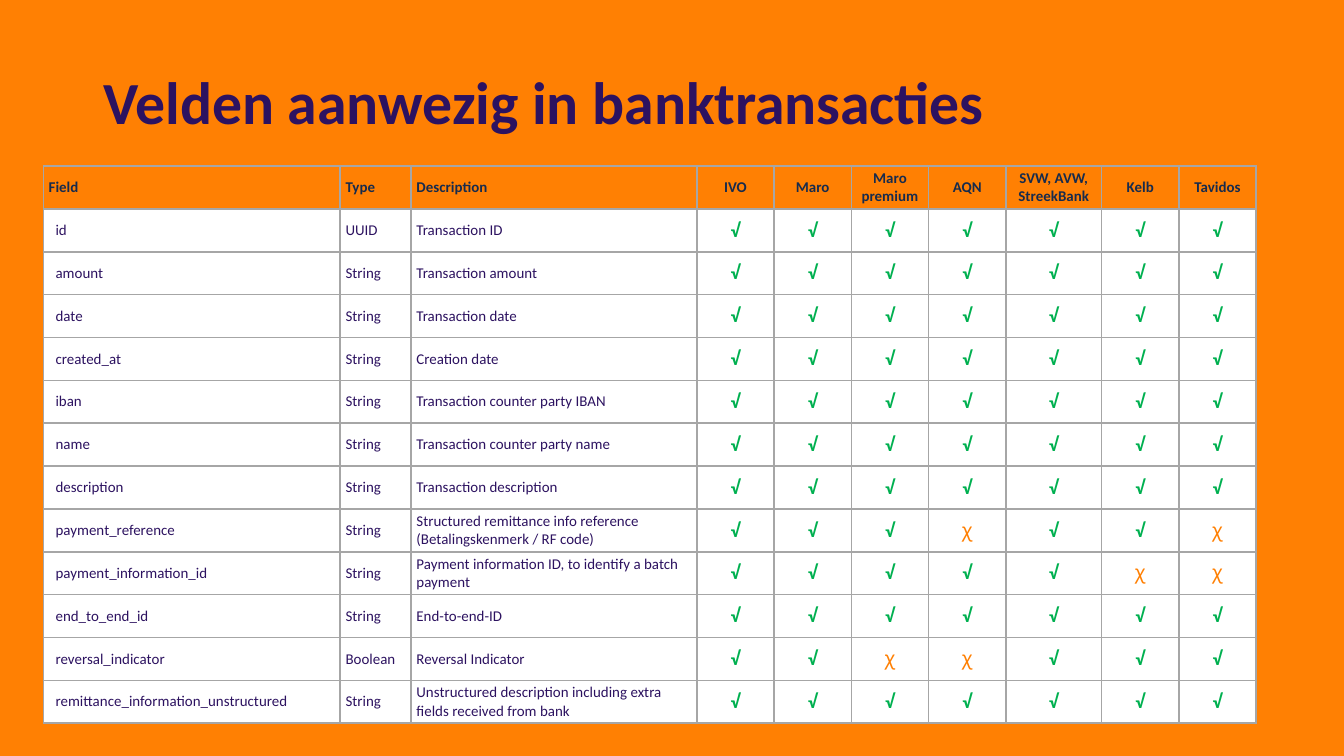
from lxml.etree import SubElement
from pptx import Presentation
from pptx.dml.color import RGBColor
from pptx.enum.text import MSO_ANCHOR, PP_ALIGN
from pptx.oxml.ns import qn
from pptx.util import Cm, Pt

ORANGE = RGBColor(0xFF, 0x80, 0x03)
PURPLE = RGBColor(0x2C, 0x12, 0x60)
NAVY = RGBColor(0x17, 0x2B, 0x4D)
GREEN = RGBColor(0x00, 0xB0, 0x50)
WHITE = RGBColor(0xFF, 0xFF, 0xFF)
GREY = RGBColor(0xA6, 0xA6, 0xA6)

TITLE_FONT = {"name": "Calibri", "size": Pt(32), "bold": True}
HEADER_FONT = {"name": "Calibri", "size": Pt(8), "bold": True}
BODY_FONT = {"name": "Calibri", "size": Pt(8), "bold": False}
PRESENT_FONT = {"name": "Calibri", "size": Pt(10.5), "bold": True}
ABSENT_FONT = {"name": "Calibri", "size": Pt(10.5), "bold": False}
CELL_FORMAT = {
    "margin_left": Cm(0.1), "margin_right": Cm(0.1),
    "margin_top": Cm(0.03), "margin_bottom": Cm(0.03),
    "vertical_anchor": MSO_ANCHOR.MIDDLE,
}
FIELD_INDENT = Cm(0.23)

COLUMN_WIDTHS = [5.61, 1.34, 5.4] + [1.46] * 4 + [1.81] + [1.46] * 2
ROW_HEIGHT = 0.81
LABELS = ["Field", "Type", "Description"]
BANKS = ["IVO", "Maro", "Maro premium", "AQN", "SVW, AVW,\nStreekBank", "Kelb", "Tavidos"]
# Field, type, description, banks that do not supply the field
FIELDS = [
    ("id", "UUID", "Transaction ID", ()),
    ("amount", "String", "Transaction amount", ()),
    ("date", "String", "Transaction date", ()),
    ("created_at", "String", "Creation date", ()),
    ("iban", "String", "Transaction counter party IBAN", ()),
    ("name", "String", "Transaction counter party name", ()),
    ("description", "String", "Transaction description", ()),
    ("payment_reference", "String",
     "Structured remittance info reference (Betalingskenmerk / RF code)", ("AQN", "Tavidos")),
    ("payment_information_id", "String",
     "Payment information ID, to identify a batch payment", ("Kelb", "Tavidos")),
    ("end_to_end_id", "String", "End-to-end-ID", ()),
    ("reversal_indicator", "Boolean", "Reversal Indicator", ("Maro premium", "AQN")),
    ("remittance_information_unstructured", "String",
     "Unstructured description including extra fields received from bank", ()),
]


def write_text(frame, text, font_format, color, align=PP_ALIGN.LEFT):
    frame.text = text
    for paragraph in frame.paragraphs:
        paragraph.alignment = align
        for run in paragraph.runs:
            for key, value in font_format.items():
                setattr(run.font, key, value)
            run.font.color.rgb = color


def add_borders(cell):
    properties = cell._tc.get_or_add_tcPr()
    for side in ("a:lnL", "a:lnR", "a:lnT", "a:lnB"):
        line = SubElement(properties, qn(side), w=str(Pt(1)))
        fill = SubElement(line, qn("a:solidFill"))
        SubElement(fill, qn("a:srgbClr"), val=str(GREY))


def fill_cell(cell, text, font_format, color, align=PP_ALIGN.LEFT, background=WHITE):
    """Format one cell; a background of None leaves it transparent."""
    for key, value in CELL_FORMAT.items():
        setattr(cell, key, value)
    write_text(cell.text_frame, text, font_format, color, align)
    add_borders(cell)
    if background is None:
        cell.fill.background()
    else:
        cell.fill.solid()
        cell.fill.fore_color.rgb = background


def add_title(slide, text):
    title = slide.shapes.title
    title.left, title.top, title.width, title.height = Cm(1.7), Cm(0.61), Cm(19.84), Cm(2.77)
    title.text_frame.vertical_anchor = MSO_ANCHOR.MIDDLE
    write_text(title.text_frame, text, TITLE_FONT, PURPLE)
    title.text_frame.paragraphs[0].line_spacing = 0.9


def add_field_table(slide):
    row_count = len(FIELDS) + 1
    table = slide.shapes.add_table(
        row_count, len(COLUMN_WIDTHS), Cm(0.82), Cm(3.14),
        Cm(sum(COLUMN_WIDTHS)), Cm(ROW_HEIGHT * row_count)).table
    table.horz_banding = False
    for column, width in zip(table.columns, COLUMN_WIDTHS):
        column.width = Cm(width)
    for row in table.rows:
        row.height = Cm(ROW_HEIGHT)

    for index, heading in enumerate(LABELS + BANKS):
        align = PP_ALIGN.LEFT if index < len(LABELS) else PP_ALIGN.CENTER
        fill_cell(table.cell(0, index), heading, HEADER_FONT, NAVY, align, None)

    for row, (*details, absent) in enumerate(FIELDS, start=1):
        for column, detail in enumerate(details):
            fill_cell(table.cell(row, column), detail, BODY_FONT, PURPLE)
        table.cell(row, 0).margin_left = FIELD_INDENT
        for column, bank in enumerate(BANKS, start=len(LABELS)):
            mark = ("ꭓ", ABSENT_FONT, ORANGE) if bank in absent else ("√", PRESENT_FONT, GREEN)
            fill_cell(table.cell(row, column), *mark, PP_ALIGN.CENTER)


def main():
    presentation = Presentation()
    presentation.slide_width, presentation.slide_height = Cm(25.4), Cm(14.29)
    slide = presentation.slides.add_slide(presentation.slide_layouts[5])
    slide.background.fill.solid()
    slide.background.fill.fore_color.rgb = ORANGE
    add_title(slide, "Velden aanwezig in banktransacties")
    add_field_table(slide)
    presentation.save("out.pptx")


if __name__ == "__main__":
    main()
